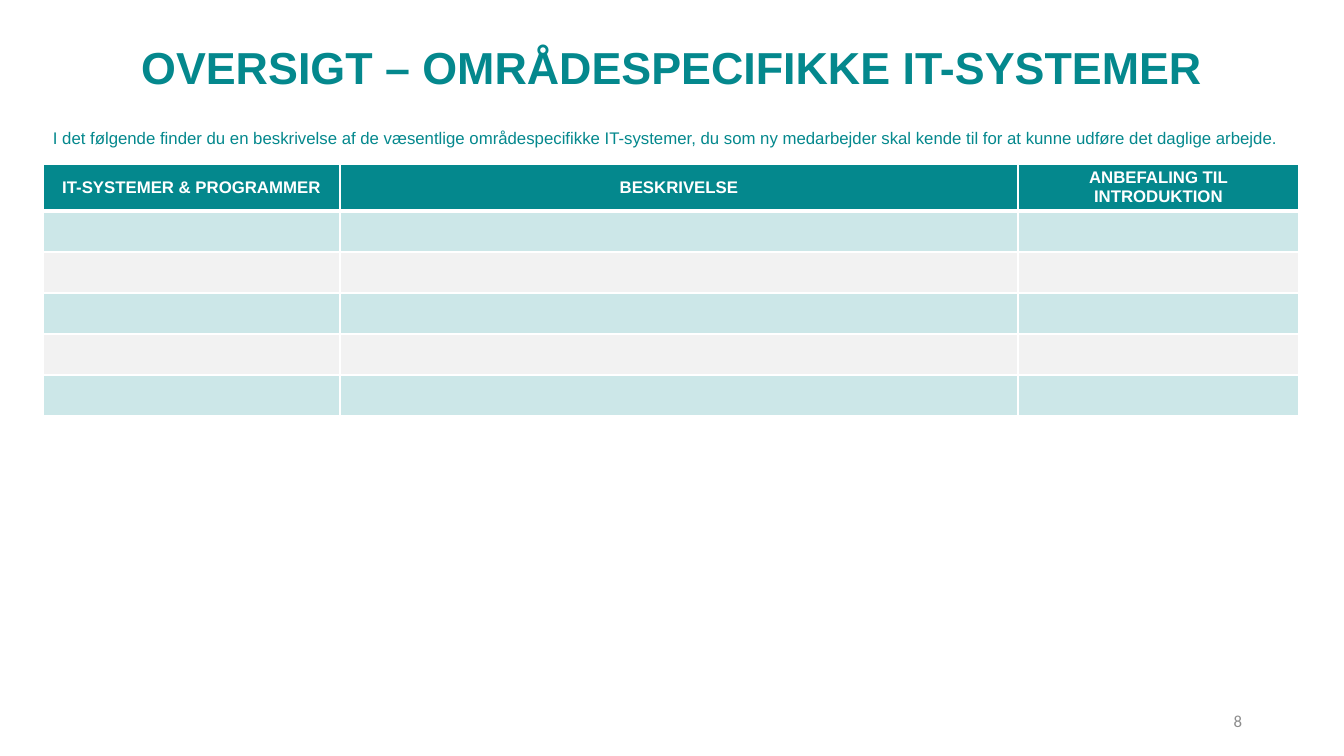
from lxml.etree import SubElement as Sub
from pptx import Presentation as Deck
from pptx.dml.color import RGBColor as Rgb
from pptx.enum.text import MSO_ANCHOR as Anchor, PP_ALIGN as Align
from pptx.oxml.ns import qn
from pptx.util import Emu, Pt

SCALE = 914400 / 100.8
HEX = {"teal": "04888D", "pale": "F2F2F2", "white": "FFFFFF", "gray": "8C8C8C"}
HEADS = ["IT-SYSTEMER & PROGRAMMER", "BESKRIVELSE", "ANBEFALING TIL INTRODUKTION"]
WIDTHS = [297, 678, 281]
ROWS = 5
HEAD_H, ROW_H = 47, 41


def px(num):
    return Emu(round(num * SCALE))


def write(frame, text, size=12, font="Arial", color="teal", bold=False,
          align=Align.LEFT, anchor=Anchor.TOP, space=None):
    frame.word_wrap = True
    frame.vertical_anchor = anchor
    para = frame.paragraphs[0]
    para.alignment = align
    para.line_spacing = space
    run = para.add_run()
    run.text = text
    run.font.size = Pt(size)
    run.font.name = font
    run.font.bold = bold
    run.font.color.rgb = Rgb.from_string(HEX[color])


def label(slide, box, text, **form):
    shape = slide.shapes.add_textbox(*map(px, box))
    write(shape.text_frame, text, **form)


def paint(cell, color, alpha=None):
    """Fill the cell; alpha is its opacity in percent."""
    cell.fill.solid()
    cell.fill.fore_color.rgb = Rgb.from_string(HEX[color])
    if alpha:
        tone = cell.fill._xPr.find(qn("a:solidFill"))[0]
        Sub(tone, qn("a:alpha"), val=str(alpha * 1000))


def edge(cell, base=1):
    """Draw white borders, with the bottom one base points wide."""
    props = cell._tc.get_or_add_tcPr()
    for spot, (side, wide) in enumerate(zip("LRTB", (1, 1, 1, base))):
        line = Sub(props, qn(f"a:ln{side}"), w=str(Pt(wide)))
        Sub(Sub(line, qn("a:solidFill")), qn("a:srgbClr"), val=HEX["white"])
        props.insert(spot, line)


def grid(slide, left, top):
    high = HEAD_H + ROWS * ROW_H
    box = map(px, (left, top, sum(WIDTHS), high))
    table = slide.shapes.add_table(ROWS + 1, len(HEADS), *box).table
    for col, wide in zip(table.columns, WIDTHS):
        col.width = px(wide)
    for num, row in enumerate(table.rows):
        row.height = px(ROW_H if num else HEAD_H)
        for cell, head in zip(row.cells, HEADS):
            if num == 0:
                paint(cell, "teal")
                cell.margin_top = cell.margin_bottom = px(3)
                cell.vertical_anchor = Anchor.MIDDLE
                write(cell.text_frame, head, color="white", bold=True,
                      align=Align.CENTER, anchor=Anchor.MIDDLE)
            elif num % 2:
                paint(cell, "teal", alpha=20)
            else:
                paint(cell, "pale")
            edge(cell, base=1 if num else 3)


def main():
    deck = Deck()
    deck.slide_width, deck.slide_height = px(1344), px(756)
    slide = deck.slides.add_slide(deck.slide_layouts[6])
    grid(slide, 43, 164)
    label(slide, (43, 123, 1257, 30),
          "I det følgende finder du en beskrivelse af de væsentlige "
          "områdespecifikke IT-systemer, du som ny medarbejder skal kende til "
          "for at kunne udføre det daglige arbejde.")
    label(slide, (0, 32, 1344, 76), "OVERSIGT – OMRÅDESPECIFIKKE IT-SYSTEMER",
          size=32, bold=True, align=Align.CENTER, anchor=Anchor.MIDDLE, space=0.9)
    label(slide, (950, 701, 302, 40), "8", font="Calibri", color="gray",
          align=Align.RIGHT, anchor=Anchor.MIDDLE)
    deck.save("out.pptx")


if __name__ == "__main__":
    main()
